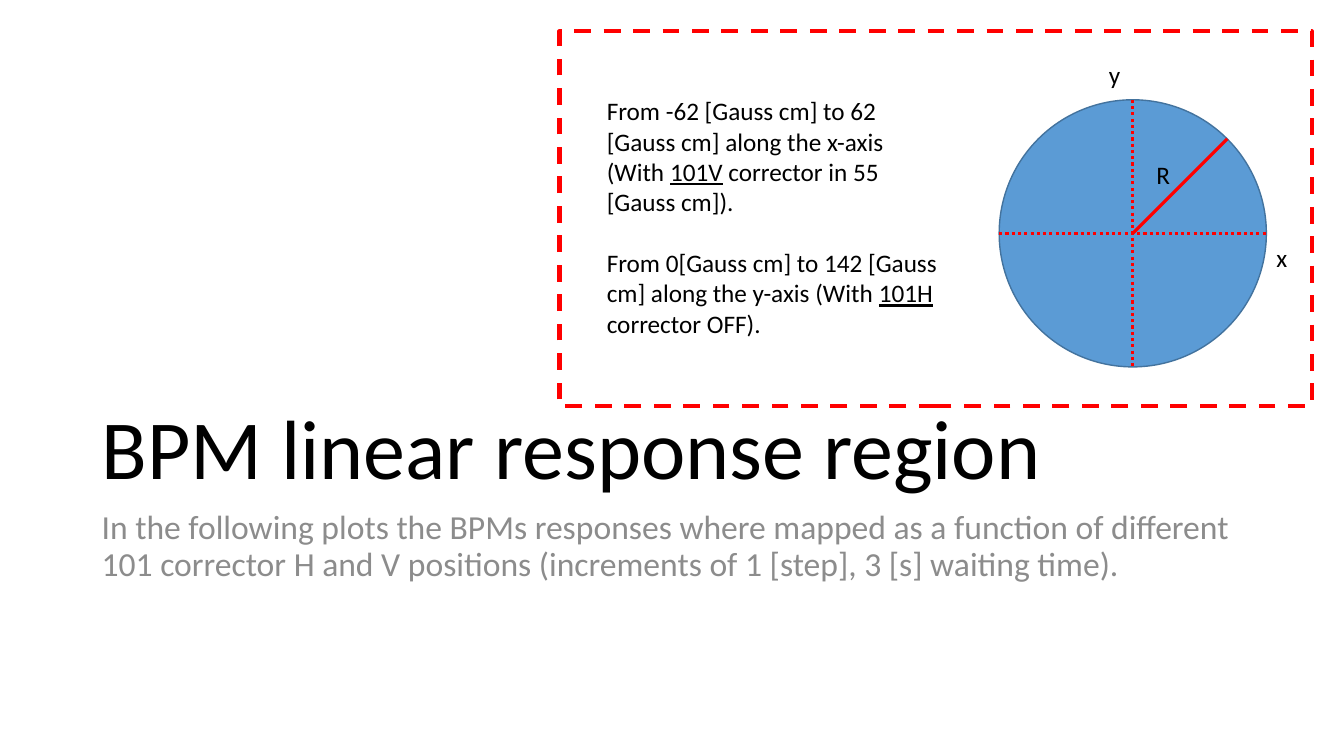
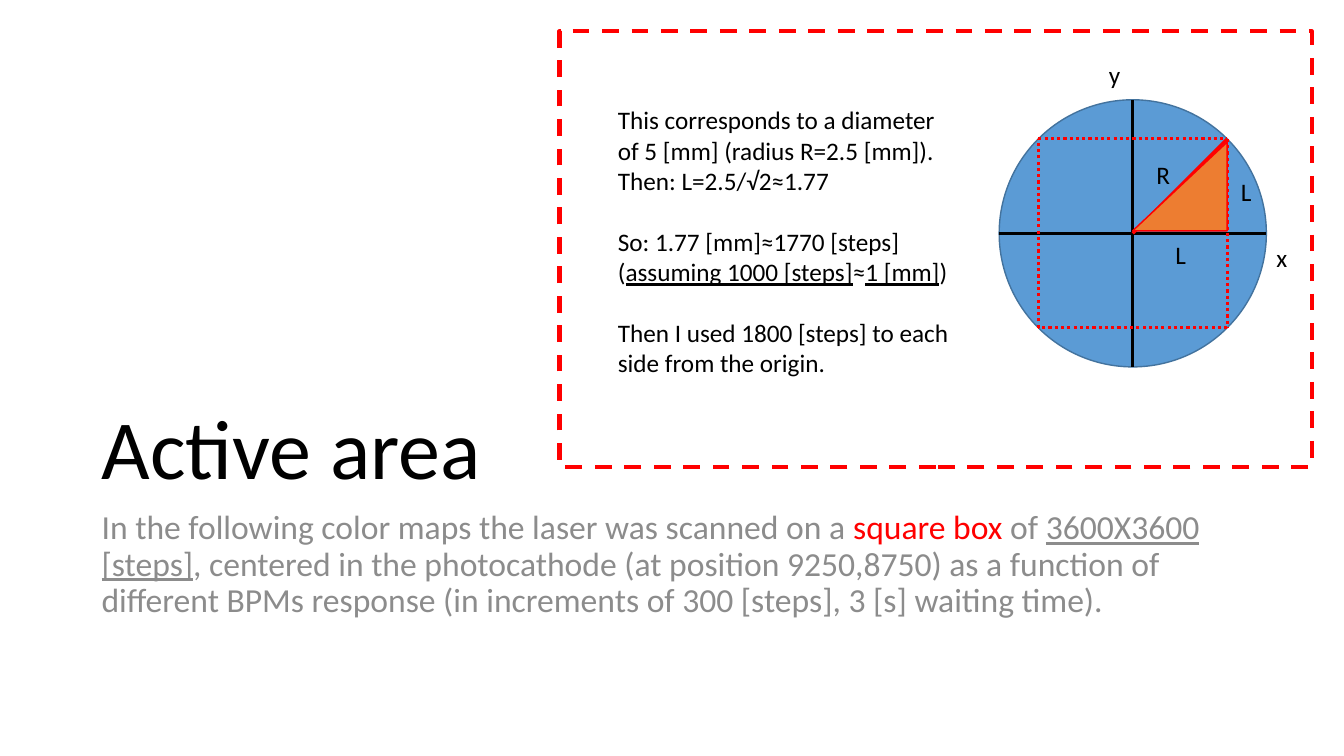
from math import sqrt

from lxml import etree
from pptx import Presentation
from pptx.dml.color import RGBColor
from pptx.enum.dml import MSO_LINE
from pptx.enum.shapes import MSO_CONNECTOR, MSO_SHAPE
from pptx.enum.text import MSO_ANCHOR
from pptx.oxml.ns import qn
from pptx.util import Inches, Pt

STRAIGHT = MSO_CONNECTOR.STRAIGHT
RECTANGLE, OVAL, TRIANGLE = MSO_SHAPE.RECTANGLE, MSO_SHAPE.OVAL, MSO_SHAPE.RIGHT_TRIANGLE
TOP, BOTTOM = MSO_ANCHOR.TOP, MSO_ANCHOR.BOTTOM
DASH, DOTS = MSO_LINE.DASH, MSO_LINE.ROUND_DOT

FONT = "Calibri"
BLACK = RGBColor(0x00, 0x00, 0x00)
RED = RGBColor(0xFF, 0x00, 0x00)
GRAY = RGBColor(0x8C, 0x8C, 0x8C)
BLUE = RGBColor(0x5B, 0x9B, 0xD5)
DARK_BLUE = RGBColor(0x43, 0x73, 0x9E)
ORANGE = RGBColor(0xED, 0x7D, 0x31)

# Geometry of the circle diagram, in inches
CIRCLE_LEFT, CIRCLE_TOP, DIAMETER = 9.91, 0.99, 2.65
RADIUS = DIAMETER / 2
CENTER_X, CENTER_Y = CIRCLE_LEFT + RADIUS, CIRCLE_TOP + RADIUS
HALF_SIDE = RADIUS / sqrt(2)

BLANK_LINE = 22  # points of space that separate blocks of notes


def underlined(text):
    return text, {"underline": True}


def add_text(slide, box, paragraphs, size=18, color=BLACK, anchor=TOP,
             wrap=True, line_spacing=None, gaps=()):
    """Each paragraph is a list of spans: plain text or (text, format).
    gaps lists the indexes of paragraphs that follow a blank line."""
    frame = slide.shapes.add_textbox(*map(Inches, box)).text_frame
    frame.word_wrap = wrap
    frame.vertical_anchor = anchor
    for index, spans in enumerate(paragraphs):
        para = frame.paragraphs[0] if index == 0 else frame.add_paragraph()
        para.line_spacing = line_spacing
        if index in gaps:
            para.space_before = Pt(BLANK_LINE)
        for item in spans:
            text, style = (item, {}) if isinstance(item, str) else item
            span = para.add_run()
            span.text = text
            span.font.name = FONT
            span.font.size = Pt(size)
            span.font.color.rgb = style.get("color", color)
            span.font.underline = style.get("underline")


def add_label(slide, text, left, top):
    add_text(slide, (left, top, 0.32, 0.4), [[text]], wrap=False)


def add_shape(slide, kind, box, line_color, line_width=1, fill=None, dash=None):
    shape = slide.shapes.add_shape(kind, *map(Inches, box))
    shape.shadow.inherit = False
    if fill is None:
        shape.fill.background()
    else:
        shape.fill.solid()
        shape.fill.fore_color.rgb = fill
    shape.line.color.rgb = line_color
    shape.line.width = Pt(line_width)
    shape.line.dash_style = dash
    return shape


def add_line(slide, start, end, color=RED, dash=None):
    line = slide.shapes.add_connector(STRAIGHT, *map(Inches, (*start, *end)))
    line.line.color.rgb = color
    line.line.width = Pt(2.25)
    line.line.dash_style = dash
    etree.SubElement(line._element.spPr, qn("a:effectLst"))


def add_circle_diagram(slide, axis_color, axis_dash=None):
    add_shape(slide, OVAL, (CIRCLE_LEFT, CIRCLE_TOP, DIAMETER, DIAMETER),
              DARK_BLUE, fill=BLUE)
    add_line(slide, (CENTER_X, CIRCLE_TOP), (CENTER_X, CIRCLE_TOP + DIAMETER),
             axis_color, axis_dash)
    add_line(slide, (CIRCLE_LEFT, CENTER_Y), (CIRCLE_LEFT + DIAMETER, CENTER_Y),
             axis_color, axis_dash)
    add_line(slide, (CENTER_X, CENTER_Y), (CENTER_X + HALF_SIDE, CENTER_Y - HALF_SIDE))
    add_label(slide, "y", 10.9, 0.54)
    add_label(slide, "x", 12.56, 2.35)


def add_inscribed_square(slide):
    left, right = CENTER_X - HALF_SIDE, CENTER_X + HALF_SIDE
    top, bottom = CENTER_Y - HALF_SIDE, CENTER_Y + HALF_SIDE
    corners = [(left, top), (right, top), (right, bottom), (left, bottom)]
    for start, end in zip(corners, corners[1:] + corners[:1]):
        add_line(slide, start, end, dash=DOTS)
    triangle = add_shape(slide, TRIANGLE, (CENTER_X, 1.41, HALF_SIDE, 0.88),
                         RED, fill=ORANGE)
    triangle._element.spPr.get_or_add_xfrm().set("flipH", "1")
    add_label(slide, "L", 11.56, 2.33)
    add_label(slide, "L", 12.21, 1.7)


def add_section_slide(deck, title, summary, frame_height):
    """Title, summary and the dashed frame that both slides share."""
    slide = deck.slides.add_slide(deck.slide_layouts[6])
    add_text(slide, (0.91, 1.87, 11.5, 3.12), [[title]], size=60,
             anchor=BOTTOM, line_spacing=0.9)
    add_text(slide, (0.91, 5.02, 11.5, 1.64), [summary], size=24,
             color=GRAY, line_spacing=0.9)
    add_shape(slide, RECTANGLE, (5.55, 0.31, 7.46, frame_height), RED, 3, dash=DASH)
    return slide


def build_linear_response(deck):
    slide = add_section_slide(
        deck, "BPM linear response region",
        ["In the following plots the BPMs responses where mapped as a function of "
         "different 101 corrector H and V positions (increments of 1 [step], "
         "3 [s] waiting time)."], 3.72)
    add_text(slide, (5.92, 0.9, 3.5, 3.13), [
        ["From -62 [Gauss cm] to 62 [Gauss cm] along the x-axis (With ",
         underlined("101V"), " corrector in 55 [Gauss cm])."],
        ["From 0[Gauss cm] to 142 [Gauss cm] along the y-axis (With ",
         underlined("101H"), " corrector OFF)."],
    ], gaps=(1,))
    add_circle_diagram(slide, RED, DOTS)
    add_label(slide, "R", 11.37, 1.53)


def build_active_area(deck):
    slide = add_section_slide(
        deck, "Active area",
        ["In the following color maps the laser was scanned on a ",
         ("square box", {"color": RED}), " of ", underlined("3600X3600 [steps]"),
         ", centered in the photocathode (at position 9250,8750) as a function of "
         "different BPMs response (in increments of 300 [steps], 3 [s] waiting time)."],
        4.32)
    add_text(slide, (6.03, 0.99, 3.5, 3.13), [
        ["This corresponds to a diameter of 5 [mm] (radius R=2.5 [mm])."],
        ["Then: L=2.5/√2≈1.77"],
        ["So: 1.77 [mm]≈1770 [steps] (", underlined("assuming 1000 [steps]"),
         "≈", underlined("1 [mm]"), ")"],
        ["Then I used 1800 [steps] to each side from the origin."],
    ], gaps=(2, 3))
    add_circle_diagram(slide, BLACK)
    add_inscribed_square(slide)
    add_label(slide, "R", 11.37, 1.53)


def main():
    deck = Presentation()
    deck.slide_width, deck.slide_height = Inches(13.33), Inches(7.5)
    build_linear_response(deck)
    build_active_area(deck)
    deck.save("out.pptx")


if __name__ == "__main__":
    main()
